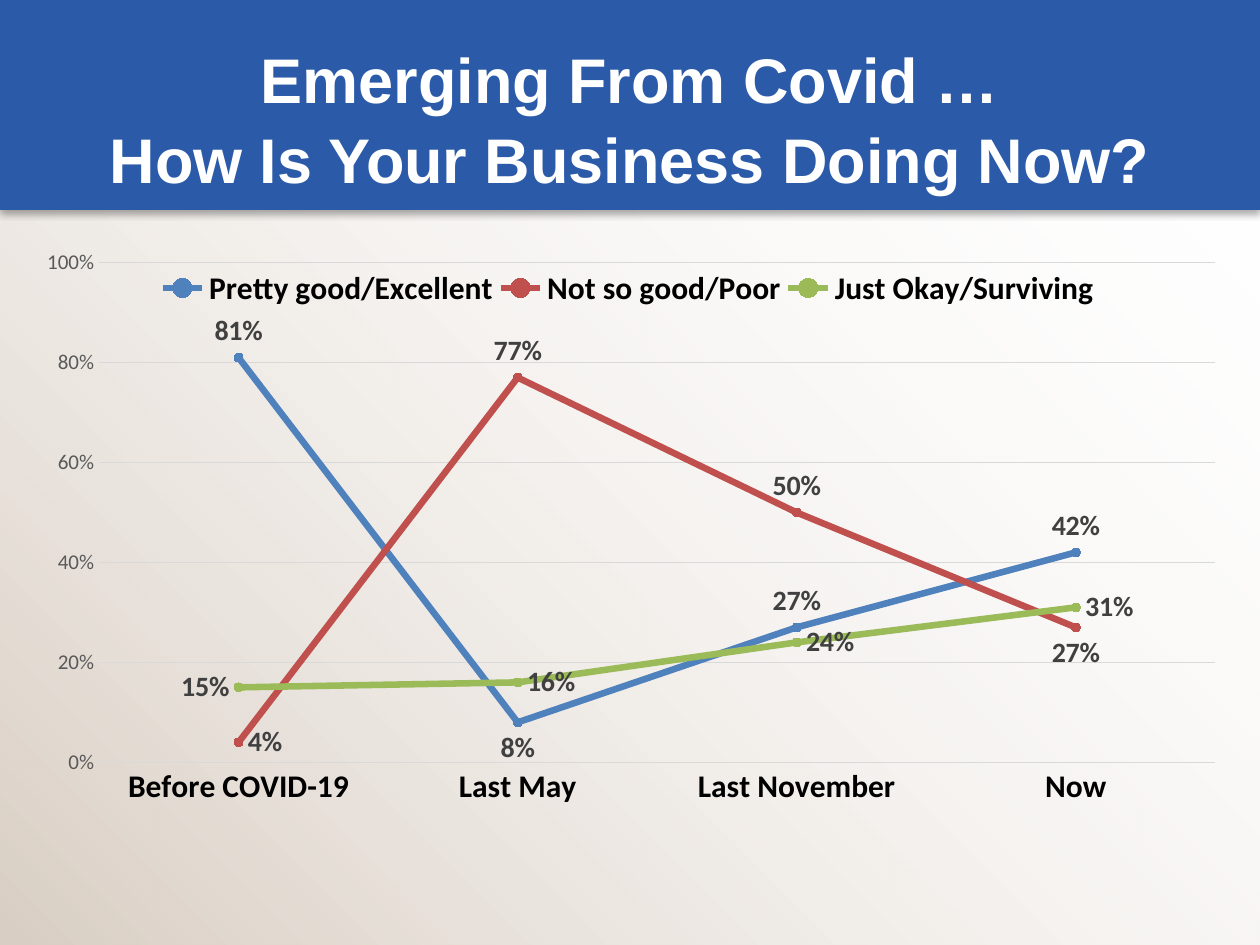
import pptx
import pptx.chart.data
import pptx.dml.color
import pptx.enum.chart
import pptx.enum.shapes
import pptx.enum.text
import pptx.oxml
import pptx.oxml.ns
import pptx.util

WIDTH, HEIGHT = pptx.util.Inches(10), pptx.util.Inches(7.5)
POSITION = pptx.enum.chart.XL_LABEL_POSITION
TITLE_LINES = ["Emerging From Covid …", "How Is Your Business Doing Now?"]
PERIODS = ["Before COVID-19", "Last May", "Last November", "Now"]
RATINGS = [
    ("Pretty good/Excellent", (0.81, 0.08, 0.27, 0.42), "4F81BD",
     POSITION.ABOVE, {1: POSITION.BELOW}),
    ("Not so good/Poor", (0.04, 0.77, 0.5, 0.27), "C0504D",
     POSITION.ABOVE, {0: POSITION.RIGHT, 3: POSITION.BELOW}),
    ("Just Okay/Surviving", (0.15, 0.16, 0.24, 0.31), "9BBB59",
     POSITION.RIGHT, {0: POSITION.LEFT}),
]


def rgb(color):
    """Turn a hex string into a colour."""
    return pptx.dml.color.RGBColor.from_string(color)


def share(left, top, width, height):
    """Turn shares of the slide into a box of lengths."""
    return (int(left * WIDTH), int(top * HEIGHT), int(width * WIDTH), int(height * HEIGHT))


def fragment(xml):
    """Parse an XML fragment with the drawing and chart namespaces declared."""
    head, tail = xml.split(">", 1)
    closing = "/" if head.endswith("/") else ""
    return pptx.oxml.parse_xml(
        f"{head.rstrip('/')} {pptx.oxml.ns.nsdecls('a', 'c')}{closing}>{tail}")


def style_font(font, size, color, bold=False, name="Calibri"):
    """Set the face, size, weight and colour of a font."""
    font.name, font.size, font.bold = name, pptx.util.Pt(size), bold
    font.color.rgb = rgb(color)


def style_line(line, color, width):
    """Set the colour and width of a line."""
    line.color.rgb = rgb(color)
    line.width = pptx.util.Pt(width)


def add_panel(slide, box):
    """Add a rectangle without outline or shadow."""
    panel = slide.shapes.add_shape(pptx.enum.shapes.MSO_SHAPE.RECTANGLE, *box)
    panel.line.fill.background()
    panel.shadow.inherit = False
    return panel


def add_backdrop(slide, box):
    """Fill the box with a tan gradient that fades towards the top right."""
    fill = add_panel(slide, box).fill
    fill.gradient()
    fill.gradient_angle = 45
    for stop, color, position in zip(fill.gradient_stops, ("DACFC4", "FFFFFF"), (0, 1)):
        stop.color.rgb = rgb(color)
        stop.position = position
    faded = fill._xPr.findall(".//" + pptx.oxml.ns.qn("a:srgbClr"))[-1]
    faded.append(fragment('<a:alpha val="0"/>'))


def add_banner(slide, box):
    """Add the blue band with its shadow and the two-line title."""
    left, top, width, height = box
    band = add_panel(slide, box)
    band.fill.solid()
    band.fill.fore_color.rgb = rgb("2B5AA9")
    band._element.spPr.find(pptx.oxml.ns.qn("a:effectLst")).append(fragment(
        '<a:outerShdw blurRad="50800" dist="27940" dir="5400000" rotWithShape="0">'
        '<a:srgbClr val="000000"><a:alpha val="32000"/></a:srgbClr></a:outerShdw>'))
    title = slide.shapes.add_textbox(left + int(0.05 * width), top + int(0.18 * height),
                                     int(0.9 * width), int(0.75 * height)).text_frame
    title.word_wrap = True
    title.vertical_anchor = pptx.enum.text.MSO_ANCHOR.MIDDLE
    title.margin_left = title.margin_right = pptx.util.Inches(0.05)
    paragraph = title.paragraphs[0]
    paragraph.alignment = pptx.enum.text.PP_ALIGN.CENTER
    paragraph.line_spacing = 1.05
    for index, words in enumerate(TITLE_LINES):
        if index:
            paragraph.add_line_break()
        run = paragraph.add_run()
        run.text = words
        style_font(run.font, 36, "FFFFFF", True, "Arial")


def place_part(element, after, x, y, w, h, target=""):
    """Give a chart part a manual layout in shares of the chart."""
    for old in element.findall(pptx.oxml.ns.qn("c:layout")):
        element.remove(old)
    layout = fragment(
        f'<c:layout><c:manualLayout>{target}<c:xMode val="edge"/><c:yMode val="edge"/>'
        f'<c:x val="{x}"/><c:y val="{y}"/><c:w val="{w}"/><c:h val="{h}"/>'
        '</c:manualLayout></c:layout>')
    if after is None:
        element.insert(0, layout)
    else:
        element.find(pptx.oxml.ns.qn(after)).addnext(layout)


def style_axes(chart):
    """Format the period axis, the percentage axis and the gridlines."""
    periods, percent = chart.category_axis, chart.value_axis
    for axis in (periods, percent):
        axis.major_tick_mark = axis.minor_tick_mark = pptx.enum.chart.XL_TICK_MARK.NONE
    style_font(periods.tick_labels.font, 18, "000000", True)
    style_line(periods.format.line, "D9D9D9", 0.75)
    style_font(percent.tick_labels.font, 12, "595959")
    percent.tick_labels.number_format = "0%"
    percent.tick_labels.number_format_is_linked = False
    percent.minimum_scale, percent.maximum_scale, percent.major_unit = 0, 1, 0.2
    percent.format.line.fill.background()
    style_line(percent.major_gridlines.format.line, "D9D9D9", 0.75)


def style_rating(series, color, position, exceptions):
    """Format one line with its markers and labels."""
    series.smooth = False
    style_line(series.format.line, color, 3.75)
    series.marker.style = pptx.enum.chart.XL_MARKER_STYLE.CIRCLE
    series.marker.size = 5
    series.marker.format.fill.solid()
    series.marker.format.fill.fore_color.rgb = rgb(color)
    series.marker.format.line.color.rgb = rgb(color)
    labels = series.data_labels
    labels.show_value = True
    labels.number_format, labels.number_format_is_linked = "0%", False
    labels.position = position
    style_font(labels.font, 16, "404040", True)
    for index, side in exceptions.items():
        label = series.points[index].data_label
        style_font(label.font, 16, "404040", True)
        label.position = side


def add_ratings_chart(slide, box):
    """Add the line chart of business ratings over time."""
    ratings = pptx.chart.data.CategoryChartData(number_format="0%")
    ratings.categories = PERIODS
    for name, values, *_ in RATINGS:
        ratings.add_series(name, values)
    chart = slide.shapes.add_chart(
        pptx.enum.chart.XL_CHART_TYPE.LINE_MARKERS, *box, ratings).chart
    chart.has_title = False
    style_font(chart.font, 10, "000000")
    style_axes(chart)
    chart.plots[0].vary_by_categories = False
    for series, (_, _, color, position, exceptions) in zip(chart.plots[0].series, RATINGS):
        style_rating(series, color, position, exceptions)
    chart.has_legend = True
    chart.legend.position = pptx.enum.chart.XL_LEGEND_POSITION.BOTTOM
    chart.legend.include_in_layout = False
    style_font(chart.legend.font, 18, "000000", True)
    place_part(chart.legend._element, "c:legendPos", 0.11, 0.04, 0.78, 0.08)
    place_part(chart._chartSpace.chart.plotArea, None, 0.064, 0.036, 0.92, 0.867,
               '<c:layoutTarget val="inner"/>')


def main():
    """Build the slide and save it."""
    deck = pptx.Presentation()
    deck.slide_width, deck.slide_height = WIDTH, HEIGHT
    slide = deck.slides.add_slide(deck.slide_layouts[6])
    add_backdrop(slide, share(0, 0, 1, 1))
    add_banner(slide, share(0, 0, 1, 2 / 9))
    add_ratings_chart(slide, share(0.017, 0.256, 0.963, 0.61))
    deck.save("out.pptx")


if __name__ == "__main__":
    main()
